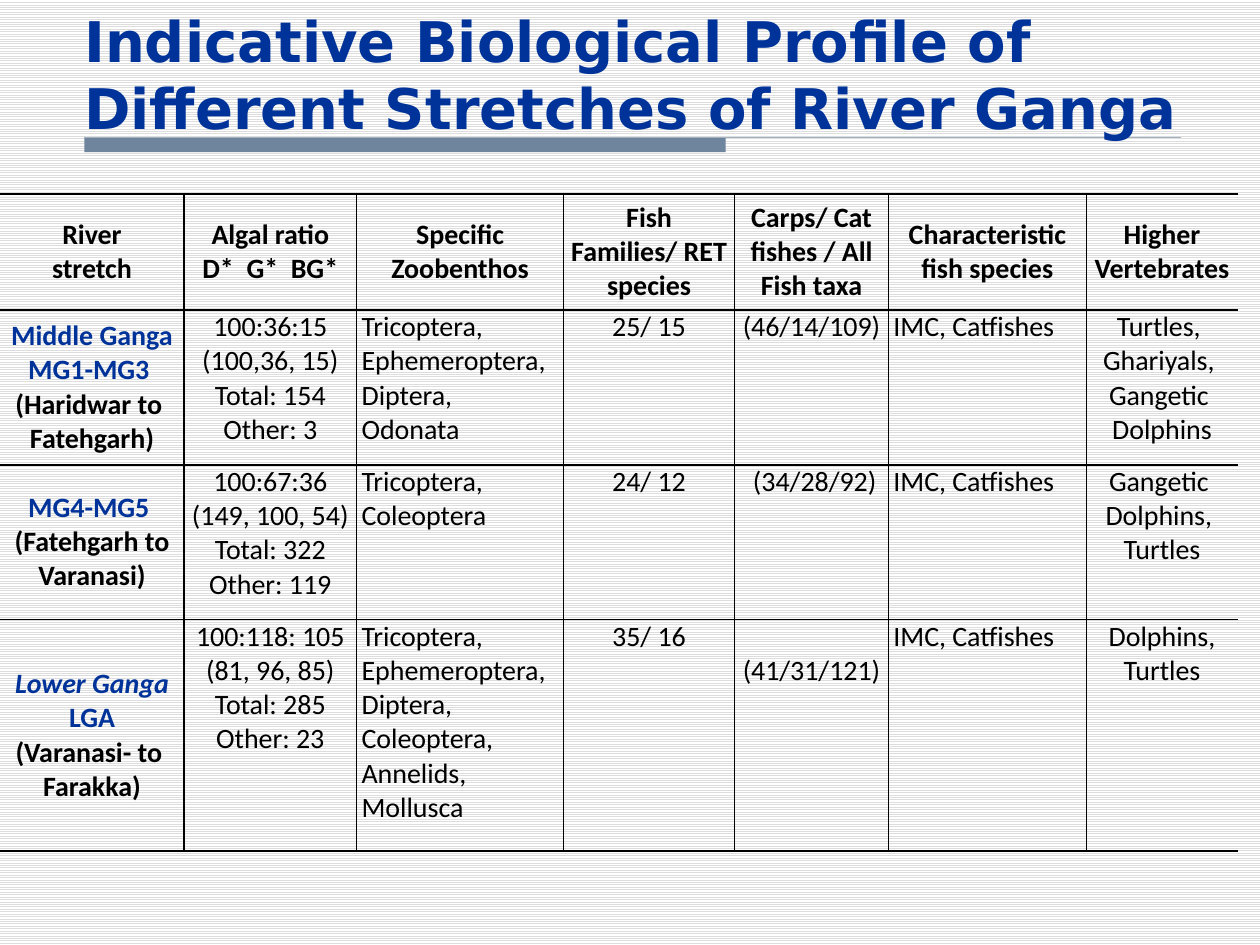
from lxml import etree
from pptx import Presentation
from pptx.dml.color import RGBColor
from pptx.enum.dml import MSO_PATTERN
from pptx.enum.shapes import MSO_CONNECTOR, MSO_SHAPE
from pptx.enum.text import MSO_ANCHOR, PP_ALIGN
from pptx.oxml.ns import qn
from pptx.util import Cm, Pt

LEFT, CENTER = PP_ALIGN.LEFT, PP_ALIGN.CENTER
TOP, MIDDLE = MSO_ANCHOR.TOP, MSO_ANCHOR.MIDDLE

BLACK = RGBColor(0x00, 0x00, 0x00)
WHITE = RGBColor(0xFF, 0xFF, 0xFF)
GREY = RGBColor(0xDD, 0xDD, 0xDD)
BLUE = RGBColor(0x00, 0x33, 0x99)
SLATE = RGBColor(0x6E, 0x85, 0x9D)
PALE = RGBColor(0xA3, 0xB2, 0xC1)
DARK = RGBColor(0x48, 0x59, 0x6A)

TITLE = "Indicative Biological Profile of Different Stretches of River Ganga"
HEADS = [
    "River\nstretch", "Algal ratio\nD*  G*  BG*", "Specific\nZoobenthos",
    "Fish\nFamilies/ RET\nspecies", "Carps/ Cat\nfishes / All\nFish taxa",
    "Characteristic\nfish species", "Higher\nVertebrates",
]
ROWS = [
    ["Middle Ganga\nMG1-MG3 \n(Haridwar to \nFatehgarh)",
     "100:36:15\n(100,36, 15)\nTotal: 154\nOther: 3",
     "Tricoptera,\nEphemeroptera,\nDiptera,\nOdonata",
     "25/ 15", "(46/14/109)", "IMC, Catfishes",
     "Turtles, \nGhariyals, \nGangetic \nDolphins"],
    ["MG4-MG5 \n(Fatehgarh to\nVaranasi)",
     "100:67:36\n(149, 100, 54)\nTotal: 322\nOther: 119",
     "Tricoptera,\nColeoptera",
     "24/ 12", " (34/28/92)", "IMC, Catfishes",
     "Gangetic \nDolphins, \nTurtles"],
    ["Lower Ganga\nLGA\n(Varanasi- to \nFarakka)",
     "100:118: 105\n(81, 96, 85)\nTotal: 285\nOther: 23",
     "Tricoptera,\nEphemeroptera,\nDiptera,\nColeoptera,\nAnnelids,\nMollusca",
     "35/ 16", " (41/31/121)", "IMC, Catfishes",
     "Dolphins,\nTurtles"],
]
NAMES = {"Middle Ganga", "MG1-MG3", "MG4-MG5", "Lower Ganga", "LGA"}
SLANTED = "Lower Ganga"
LEFT_COLS = (2, 5)

WIDTHS = [3.71, 3.48, 4.17, 3.45, 3.1, 3.99, 3.05]
HEIGHTS = [2.34, 3.12, 3.12, 4.67]
RULES = [1.5, 1.5, 1.5, 1, 1.5]  # horizontal rules, top to bottom, in points
MARGINS = dict(margin_left=Cm(0.1), margin_right=Cm(0.1),
               margin_top=0, margin_bottom=0)
EDGE = 1.7


def style(font, color, **values):
    font.color.rgb = color
    for name, value in values.items():
        setattr(font, name, value)


def add_line(slide, end, y, color, width):
    line = slide.shapes.add_connector(
        MSO_CONNECTOR.STRAIGHT, Cm(EDGE), Cm(y), Cm(end), Cm(y))
    line.line.color.rgb = color
    line.line.width = Pt(width)
    etree.SubElement(line._element.spPr, qn("a:effectLst"))


def set_borders(cell, widths):
    """Draw left, right, top and bottom borders; a width of 0 means none."""
    props = cell._tc.get_or_add_tcPr()
    for spot, (side, width) in enumerate(zip("LRTB", widths)):
        edge = etree.Element(qn(f"a:ln{side}"), w=str(Pt(width)))
        if width:
            fill = etree.SubElement(edge, qn("a:solidFill"))
            etree.SubElement(fill, qn("a:srgbClr"), val=str(BLACK))
        else:
            etree.SubElement(edge, qn("a:noFill"))
        props.insert(spot, edge)


def fill_cell(cell, text, row, col):
    label = row == 0 or col == 0
    cell.text = text
    cell.vertical_anchor = MIDDLE if label else TOP
    for name, value in MARGINS.items():
        setattr(cell, name, value)
    for para in cell.text_frame.paragraphs:
        para.alignment = LEFT if row and col in LEFT_COLS else CENTER
        line = para.text.strip()
        style(para.runs[0].font, BLUE if line in NAMES else BLACK,
              name="Calibri", size=Pt(16), bold=label, italic=line == SLANTED)
    cell.fill.background()
    set_borders(cell, (int(col > 0), int(col < len(HEADS) - 1),
                       RULES[row], RULES[row + 1]))


def add_profile(slide):
    data = [HEADS] + ROWS
    table = slide.shapes.add_table(
        len(data), len(HEADS), 0, Cm(3.91),
        Cm(sum(WIDTHS)), Cm(sum(HEIGHTS))).table
    table.first_row = table.horz_banding = False
    for col, width in zip(table.columns, WIDTHS):
        col.width = Cm(width)
    for row, height in zip(table.rows, HEIGHTS):
        row.height = Cm(height)
    for r, texts in enumerate(data):
        for c, text in enumerate(texts):
            fill_cell(table.cell(r, c), text, r, c)


def add_title(slide):
    box = slide.shapes.add_textbox(Cm(1.45), 0, Cm(23.42), Cm(3))
    frame = box.text_frame
    frame.word_wrap = True
    frame.text = TITLE
    style(frame.paragraphs[0].runs[0].font, BLUE,
          name="DejaVu Sans", size=Pt(32), bold=True)


def main():
    deck = Presentation()
    deck.slide_width, deck.slide_height = Cm(25.4), Cm(19.05)
    slide = deck.slides.add_slide(deck.slide_layouts[6])
    back = slide.background.fill
    back.patterned()
    back.pattern = MSO_PATTERN.LIGHT_HORIZONTAL
    back.fore_color.rgb, back.back_color.rgb = GREY, WHITE

    bar = slide.shapes.add_shape(
        MSO_SHAPE.RECTANGLE, Cm(EDGE), Cm(2.77), Cm(12.93), Cm(0.3))
    bar.shadow.inherit = False
    bar.fill.solid()
    bar.fill.fore_color.rgb = SLATE
    bar.line.fill.background()
    add_line(slide, 23.8, 2.77, PALE, 0.75)
    add_line(slide, 23.7, 17.15, DARK, 0.25)
    add_profile(slide)
    add_title(slide)
    deck.save("out.pptx")


if __name__ == "__main__":
    main()
